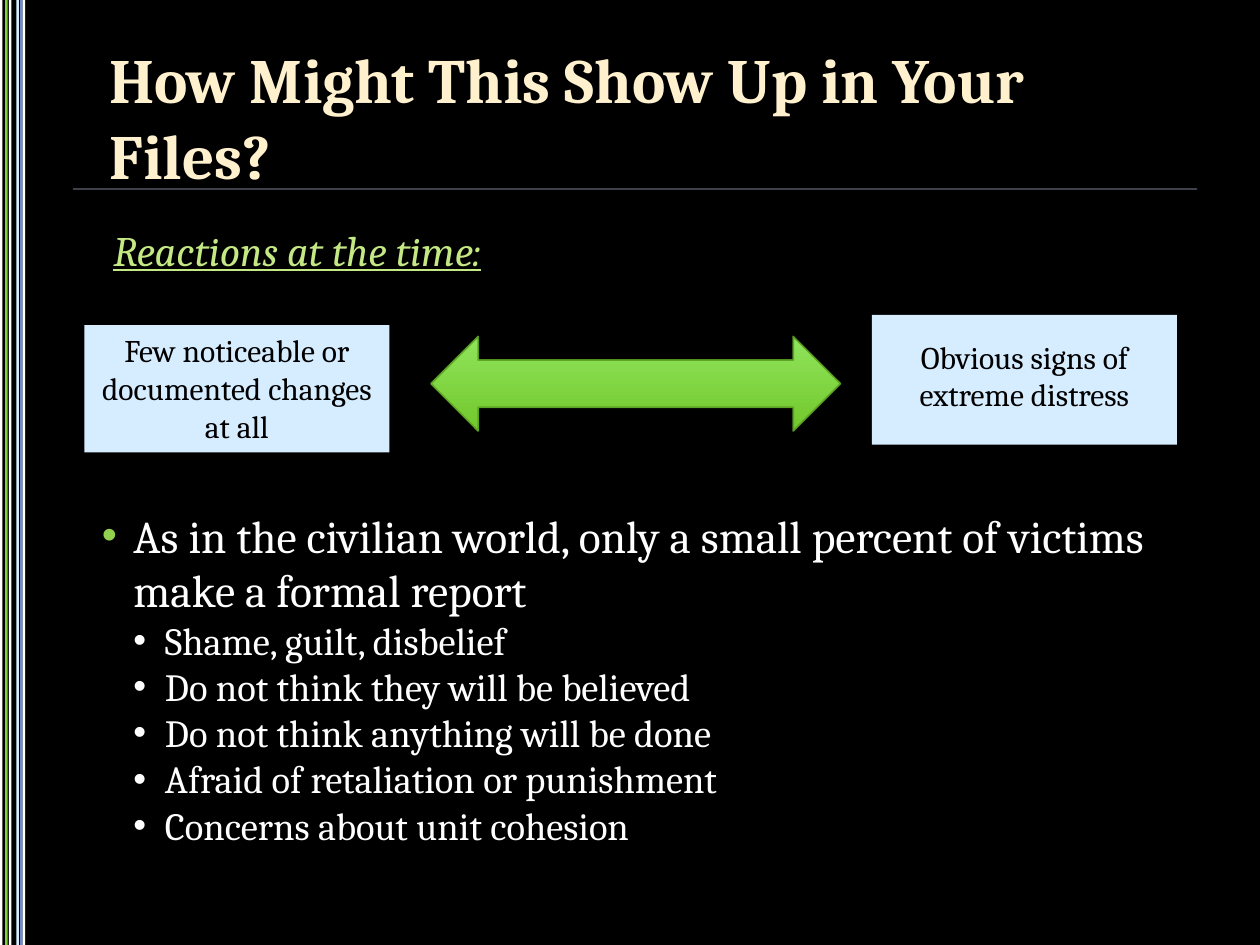
import dataclasses

import lxml.etree
import pptx
import pptx.dml.color
import pptx.enum.shapes
import pptx.enum.text
import pptx.oxml.ns
import pptx.util

EMU_PER_PX = 9144  # 100 px to the inch
WIDTH, HEIGHT = 1000, 750
SHAPES = pptx.enum.shapes.MSO_SHAPE
ALIGN = pptx.enum.text.PP_ALIGN
ANCHOR = pptx.enum.text.MSO_ANCHOR


@dataclasses.dataclass(frozen=True)
class Theme:
    font: str = "Cambria"
    black: str = "000000"
    white: str = "FFFFFF"
    pale_blue: str = "D6ECFF"
    blue: str = "738AC8"
    green: str = "7FD13B"
    rule: str = "C7D0E9"
    title: str = "FFF1CE"
    heading: str = "C4E884"
    bullet: str = "92D050"
    arrow_top: str = "90E45C"
    arrow_bottom: str = "72C82B"
    arrow_line: str = "5BA023"
    title_size: int = 36
    heading_size: int = 24
    box_size: int = 18
    point_size: int = 26
    subpoint_size: int = 22


def px(length):
    return pptx.util.Emu(length * EMU_PER_PX)


def rgb(color):
    return pptx.dml.color.RGBColor.from_string(color)


def add_element(parent, tag, **attributes):
    return lxml.etree.SubElement(parent, pptx.oxml.ns.qn(tag), attributes)


class SlideBuilder:
    def __init__(self, slide, theme):
        self.slide = slide
        self.theme = theme
        slide.background.fill.solid()
        slide.background.fill.fore_color.rgb = rgb(theme.black)

    def frame(self, shape, insets, anchor=ANCHOR.TOP):
        frame = shape.text_frame
        frame.word_wrap = True
        frame.auto_size = pptx.enum.text.MSO_AUTO_SIZE.NONE
        frame.vertical_anchor = anchor
        (frame.margin_left, frame.margin_top,
         frame.margin_right, frame.margin_bottom) = map(px, insets)
        return frame

    def run(self, paragraph, text, size, color, **styles):
        run = paragraph.add_run()
        run.text = text
        run.font.name = self.theme.font
        run.font.size = pptx.util.Pt(size)
        run.font.color.rgb = rgb(color)
        for name, value in styles.items():
            setattr(run.font, name, value)

    def outline(self, line, color, width):
        line.color.rgb = rgb(color)
        line.width = pptx.util.Pt(width)
        for solid in line.fill._xPr.iter(pptx.oxml.ns.qn("a:srgbClr")):
            add_element(solid, "a:alpha", val="90000")

    def indent(self, paragraph, left, first=-25):
        properties = paragraph._p.get_or_add_pPr()
        properties.set("marL", str(px(left)))
        properties.set("indent", str(px(first)))
        return properties

    def title(self, text, *bounds):
        shape = self.slide.shapes.title
        shape.left, shape.top, shape.width, shape.height = map(px, bounds)
        frame = self.frame(shape, (20, 20, 20, 20), ANCHOR.MIDDLE)
        paragraph = frame.paragraphs[0]
        paragraph.alignment = ALIGN.LEFT
        self.run(paragraph, text, self.theme.title_size, self.theme.title, bold=True)

    def shape(self, kind, *bounds):
        shape = self.slide.shapes.add_shape(kind, *map(px, bounds))
        shape.shadow.inherit = False
        return shape

    def rectangle(self, color, *bounds):
        shape = self.shape(SHAPES.RECTANGLE, *bounds)
        shape.fill.solid()
        shape.fill.fore_color.rgb = rgb(color)
        shape.line.fill.background()
        return shape

    def rule(self, left, right, top):
        connector = self.slide.shapes.add_connector(
            pptx.enum.shapes.MSO_CONNECTOR.STRAIGHT, *map(px, (left, top, right, top)))
        self.outline(connector.line, self.theme.rule, 0.5)
        add_element(connector._element.spPr, "a:effectLst")

    def text_box(self, *bounds):
        shape = self.slide.shapes.add_textbox(*map(px, bounds))
        return self.frame(shape, (20, 20, 20, 20))

    def heading(self, text, *bounds):
        paragraph = self.text_box(*bounds).paragraphs[0]
        paragraph.space_before = pptx.util.Pt(15)
        self.indent(paragraph, 28)
        self.run(paragraph, text, self.theme.heading_size, self.theme.heading,
                 italic=True, underline=True)

    def box(self, text, top_inset, *bounds):
        shape = self.rectangle(self.theme.pale_blue, *bounds)
        paragraph = self.frame(shape, (10, top_inset, 10, 5)).paragraphs[0]
        paragraph.alignment = ALIGN.CENTER
        self.run(paragraph, text, self.theme.box_size, self.theme.black)

    def double_arrow(self, *bounds):
        shape = self.shape(SHAPES.LEFT_RIGHT_ARROW, *bounds)
        shape.fill.gradient()
        shape.fill.gradient_angle = 270
        colors = (self.theme.arrow_top, self.theme.arrow_bottom)
        for position, (stop, color) in enumerate(zip(shape.fill.gradient_stops, colors)):
            stop.position = position
            stop.color.rgb = rgb(color)
        self.outline(shape.line, self.theme.arrow_line, 1)

    def bullet(self, paragraph, text, size, left, bullet_color):
        properties = self.indent(paragraph, left)
        color = add_element(properties, "a:buClr")
        add_element(color, "a:srgbClr", val=bullet_color)
        add_element(properties, "a:buSzPct", val="95000")
        add_element(properties, "a:buFont", typeface="Arial")
        add_element(properties, "a:buChar", char="•")
        self.run(paragraph, text, size, self.theme.white)

    def bullets(self, point, subpoints, *bounds):
        frame = self.text_box(*bounds)
        first = frame.paragraphs[0]
        first.space_before = pptx.util.Pt(15)
        self.bullet(first, point, self.theme.point_size, 28, self.theme.bullet)
        for subpoint in subpoints:
            paragraph = frame.add_paragraph()
            paragraph.level = 1
            self.bullet(paragraph, subpoint, self.theme.subpoint_size, 53,
                        self.theme.white)


def main():
    presentation = pptx.Presentation()
    presentation.slide_width, presentation.slide_height = px(WIDTH), px(HEIGHT)
    theme = Theme()
    slide = presentation.slides.add_slide(presentation.slide_layouts[5])
    builder = SlideBuilder(slide, theme)

    # Stripes down the left edge and the rule under the title
    stripes = [(0, 2, theme.white), (7, 2, theme.white), (11, 1, theme.black),
               (13, 2, theme.pale_blue), (16, 2, theme.blue),
               (18, 2, theme.white), (4, 2, theme.green)]
    for left, width, color in stripes:
        builder.rectangle(color, left, 0, width, HEIGHT)
    builder.rule(58, 950, 150)

    # Title and heading
    builder.title("How Might This Show Up in Your Files?", 67, 30, 882, 125)
    builder.heading("Reactions at the time:", 67, 158, 868, 83)

    # Range of reactions
    builder.box("Few noticeable or documented changes at all", 5, 67, 258, 242, 101)
    builder.double_arrow(342, 267, 325, 75)
    builder.box("Obvious signs of extreme distress", 18, 692, 250, 242, 103)

    # Reasons for not reporting
    builder.bullets(
        "As in the civilian world, only a small percent of victims make a formal report",
        ["Shame, guilt, disbelief",
         "Do not think they will be believed",
         "Do not think anything will be done",
         "Afraid of retaliation or punishment",
         "Concerns about unit cohesion"],
        58, 383, 876, 317)

    presentation.save("out.pptx")


if __name__ == "__main__":
    main()
